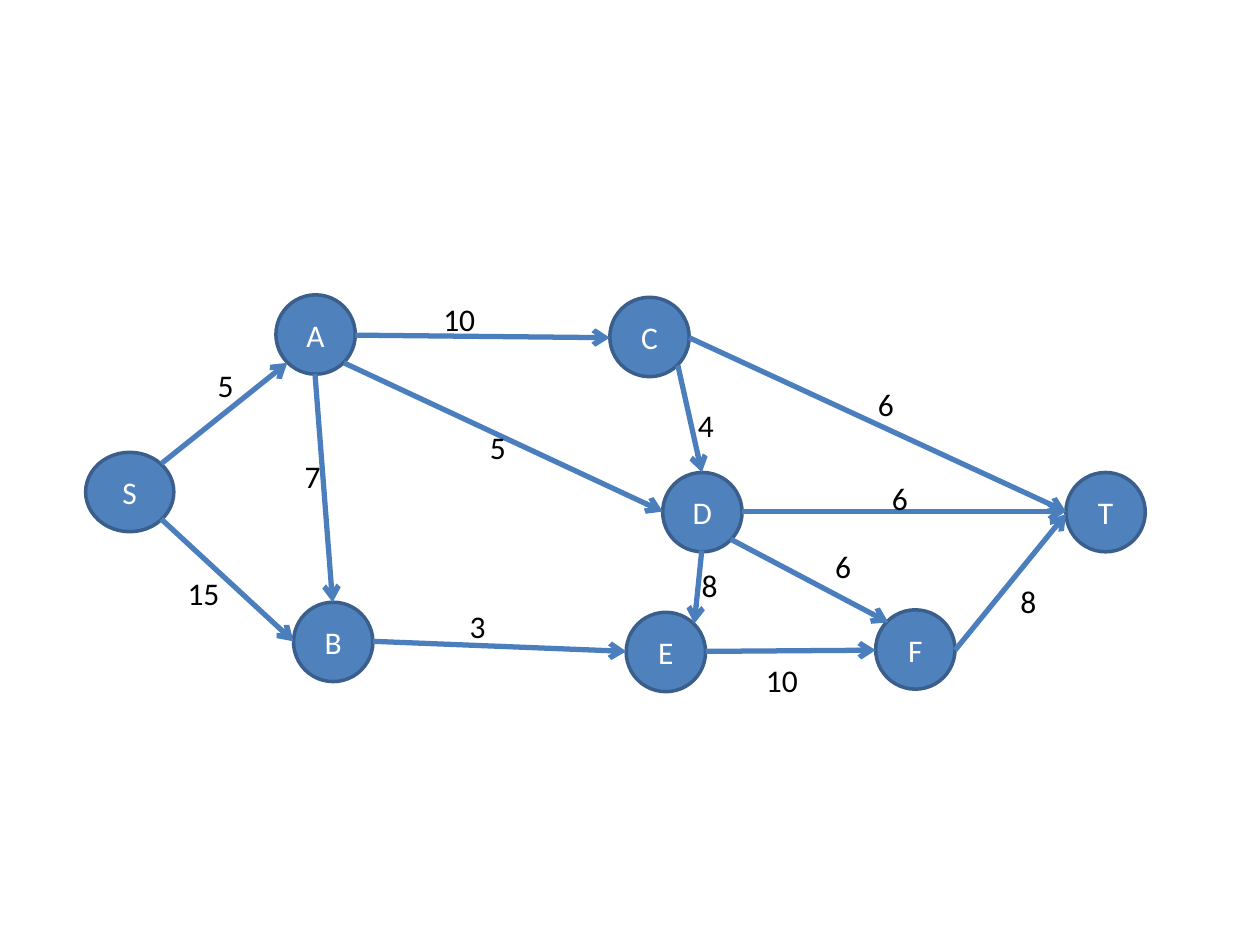
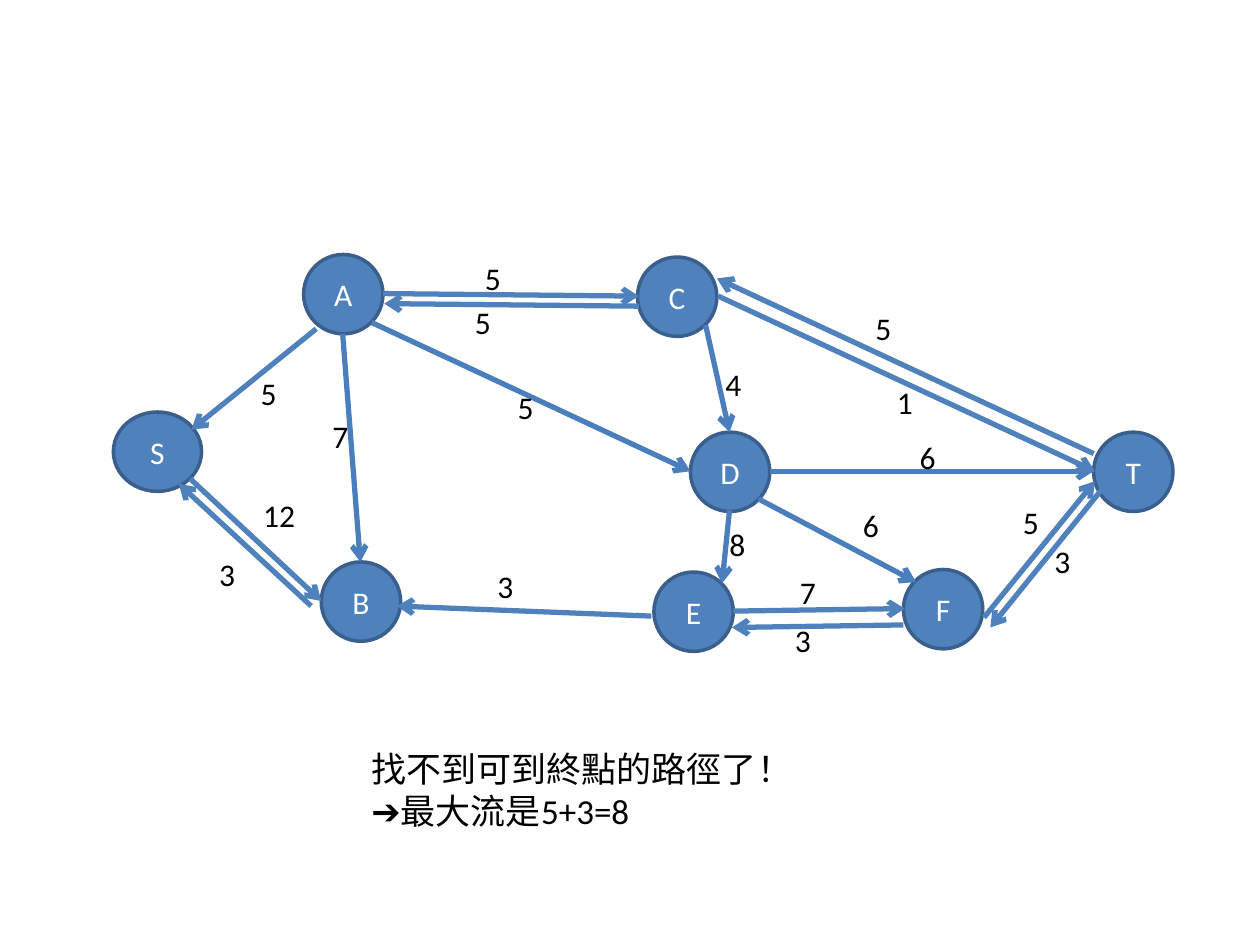
"""Build two slides: a flow network with its capacities, and its final residual network."""
from pptx import Presentation
from pptx.dml.color import RGBColor
from pptx.enum.shapes import MSO_CONNECTOR as CONN, MSO_SHAPE as SHAPE
from pptx.enum.text import MSO_ANCHOR as ANCHOR, MSO_AUTO_SIZE as AUTO, PP_ALIGN as ALIGN
from pptx.oxml.ns import qn
from pptx.util import Pt
from lxml.etree import SubElement

PX = 9144
NODE_FILL, NODE_LINE = "4F81BD", "3A5F8C"
EDGE, EDGE_CHANGED = "4B7EBC", "4F81BD"
BLACK, WHITE = "000000", "FFFFFF"


def rgb(color):
    return RGBColor.from_string(color)


def write(sp, text, size=18, color=BLACK, align=ALIGN.LEFT, anchor=ANCHOR.TOP,
          wrap=False, auto=AUTO.SHAPE_TO_FIT_TEXT):
    tf = sp.text_frame
    tf.word_wrap, tf.auto_size, tf.vertical_anchor = wrap, auto, anchor
    tf.text = text
    for p in tf.paragraphs:
        p.alignment = align
        for r in p.runs:
            r.font.name, r.font.size = "Calibri", Pt(size)
            r.font.color.rgb = rgb(color)
            SubElement(r.font._element, qn("a:ea"), typeface="Noto Sans CJK SC")


nodes = [
    ("A", 219, 234, 63), ("C", 484, 236, 63), ("B", 233, 478, 63), ("E", 497, 486, 63),
    ("F", 695, 484, 63), ("D", 526, 375, 63), ("S", 68, 359, 70), ("T", 846, 375, 63),
]
shared_edges = [
    (250, 297, 264, 478), (538, 290, 557, 375), (557, 437, 551, 495),
    (580, 428, 705, 494), (273, 288, 526, 406), (589, 406, 846, 406),
]
shared_labels = [
    ("7", 232, 358), ("5", 379, 335), ("4", 544, 317), ("3", 363, 477),
    ("8", 547, 444), ("6", 653, 429), ("6", 698, 375),
]

capacity_edges = [
    (282, 266, 484, 268), (296, 509, 497, 517), (128, 368, 228, 288), (128, 412, 233, 509),
    (560, 517, 695, 516), (547, 268, 846, 406), (758, 516, 846, 408),
]
capacity_labels = [
    ("10", 342, 233), ("5", 163, 286), ("15", 139, 451),
    ("6", 687, 301), ("10", 598, 520), ("8", 800, 457),
]

residual_edges = [
    (304, 233, 507, 235), (507, 243, 305, 241), (251, 261, 152, 341),
    (151, 380, 255, 477), (247, 481, 142, 384), (582, 485, 718, 483),
    (717, 496, 581, 498), (570, 235, 869, 374), (868, 360, 569, 221),
    (781, 490, 869, 382), (874, 389, 786, 498), (517, 489, 315, 481),
]
residual_labels = [
    ("5", 375, 201), ("5", 367, 236), ("5", 197, 292), ("3", 164, 436), ("12", 199, 389),
    ("1", 702, 299), ("5", 685, 240), ("7", 625, 450), ("3", 621, 488),
    ("3", 827, 425), ("5", 802, 394),
]

prs = Presentation()
prs.slide_width, prs.slide_height = 1000 * PX, 750 * PX
blank = prs.slide_layouts[6]
first, last = prs.slides.add_slide(blank), prs.slides.add_slide(blank)

networks = [
    (first.shapes, 0, 0, capacity_edges, EDGE, capacity_labels),
    (last.shapes.add_group_shape().shapes, 22, -32,
     residual_edges, EDGE_CHANGED, residual_labels),
]
for shapes, dx, dy, own_edges, own_color, own_labels in networks:
    for name, x, y, w in nodes:
        sp = shapes.add_shape(SHAPE.OVAL, (x + dx) * PX, (y + dy) * PX, w * PX, 63 * PX)
        sp.shadow.inherit = False
        sp.fill.solid()
        sp.fill.fore_color.rgb = rgb(NODE_FILL)
        sp.line.color.rgb, sp.line.width = rgb(NODE_LINE), Pt(2)
        write(sp, name, color=WHITE, align=ALIGN.CENTER, anchor=ANCHOR.MIDDLE,
              wrap=True, auto=AUTO.NONE)

    edges = [(x1 + dx, y1 + dy, x2 + dx, y2 + dy, EDGE) for x1, y1, x2, y2 in shared_edges]
    edges += [(*ends, own_color) for ends in own_edges]
    for *ends, color in edges:
        cn = shapes.add_connector(CONN.STRAIGHT, *[v * PX for v in ends])
        cn.line.color.rgb, cn.line.width = rgb(color), Pt(3)
        SubElement(cn.line._get_or_add_ln(), qn("a:tailEnd"), type="arrow")
        SubElement(cn._element.spPr, qn("a:effectLst"))

    labels = [(text, x + dx, y + dy) for text, x, y in shared_labels] + own_labels
    for text, x, y in labels:
        w = 22 + 12 * len(text)
        write(shapes.add_textbox(x * PX, y * PX, w * PX, 40 * PX), text)

note = last.shapes.add_textbox(285 * PX, 588 * PX, 357 * PX, 77 * PX)
write(note, "找不到可到終點的路徑了！\n➔最大流是5+3=8", size=20)

prs.save("out.pptx")
